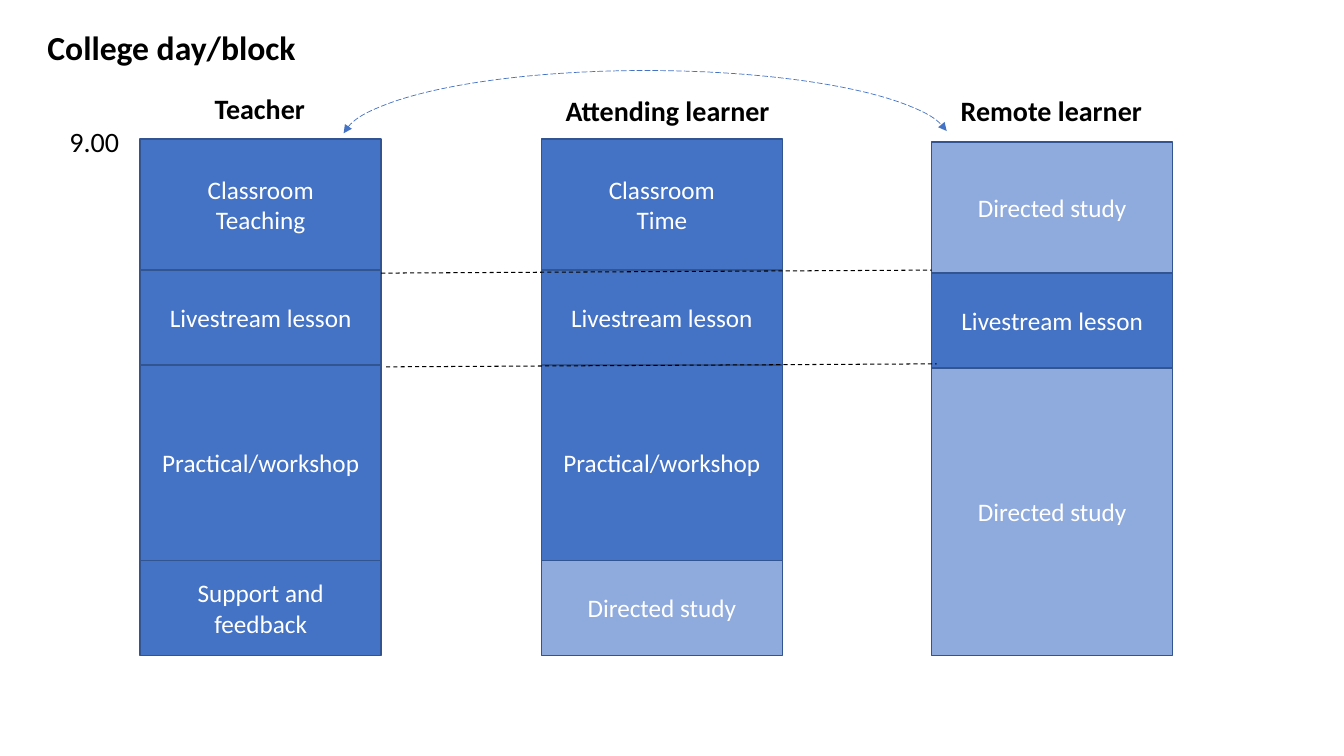
import lxml.etree
import pptx
import pptx.dml.color
import pptx.enum.dml
import pptx.enum.shapes
import pptx.enum.text
import pptx.oxml.ns
import pptx.util

ALIGN = pptx.enum.text.PP_ALIGN
ANCHOR = pptx.enum.text.MSO_ANCHOR
DASH = pptx.enum.dml.MSO_LINE
SHAPE = pptx.enum.shapes.MSO_SHAPE
BLUE, PALE, EDGE, BLACK, WHITE = "4472C4", "8FAADC", "325491", "000000", "FFFFFF"


def rgb(value):
    return pptx.dml.color.RGBColor.from_string(value)


class Deck:
    """Draws styled elements on the current slide, placed in percent of its size."""

    font = "Calibri"

    def __init__(self, width, height):
        self.prs = pptx.Presentation()
        self.prs.slide_width = pptx.util.Inches(width)
        self.prs.slide_height = pptx.util.Inches(height)
        self.s = self.prs.slides.add_slide(self.prs.slide_layouts[5])

    def at(self, *shares):
        sizes = (self.prs.slide_width, self.prs.slide_height) * 2
        return [round(share * size / 100) for share, size in zip(shares, sizes)]

    def put_text(self, sp, text, size, color=BLACK, bold=False, align=ALIGN.LEFT,
                 anchor=ANCHOR.TOP, wrap=False):
        tf = sp.text_frame
        tf.word_wrap = wrap
        tf.auto_size = pptx.enum.text.MSO_AUTO_SIZE.NONE
        tf.vertical_anchor = anchor
        for i, line in enumerate(text.split("\n")):
            p = tf.add_paragraph() if i else tf.paragraphs[0]
            p.alignment = align
            r = p.add_run()
            r.text = line
            r.font.name = self.font
            r.font.size = pptx.util.Pt(size)
            r.font.bold = bold
            r.font.color.rgb = rgb(color)

    def stroke(self, sp, color, width, dash=None):
        sp.line.color.rgb = rgb(color)
        sp.line.width = pptx.util.Pt(width)
        if dash:
            sp.line.dash_style = dash

    def title(self, text, *box):
        sp = self.s.shapes.title
        sp.left, sp.top, sp.width, sp.height = self.at(*box)
        self.put_text(sp, text, 24, bold=True)

    def label(self, text, *box, bold=False):
        sp = self.s.shapes.add_textbox(*self.at(*box))
        self.put_text(sp, text, 20, bold=bold)

    def block(self, text, fill, *box):
        sp = self.s.shapes.add_shape(SHAPE.RECTANGLE, *self.at(*box))
        sp.shadow.inherit = False
        sp.fill.solid()
        sp.fill.fore_color.rgb = rgb(fill)
        self.stroke(sp, EDGE, 1)
        self.put_text(sp, text, 18, WHITE, align=ALIGN.CENTER, anchor=ANCHOR.MIDDLE, wrap=True)

    def column(self, left, width, edges, blocks):
        for top, bottom, (text, fill) in zip(edges, edges[1:], blocks):
            self.block(text, fill, left, top, width, bottom - top)

    def guide(self, *ends):
        kind = pptx.enum.shapes.MSO_CONNECTOR.STRAIGHT
        sp = self.s.shapes.add_connector(kind, *self.at(*ends))
        self.stroke(sp, BLACK, 0.75, DASH.DASH)
        lxml.etree.SubElement(sp._element.spPr, pptx.oxml.ns.qn("a:effectLst"))

    def arc(self, start, end, *box):
        sp = self.s.shapes.add_shape(SHAPE.ARC, *self.at(*box))
        sp.shadow.inherit = False
        sp.adjustments[0], sp.adjustments[1] = start, end
        sp.fill.background()
        self.stroke(sp, BLUE, 0.5, DASH.LONG_DASH)
        ln = sp._element.spPr.find(pptx.oxml.ns.qn("a:ln"))
        for tag in ("a:headEnd", "a:tailEnd"):
            lxml.etree.SubElement(ln, pptx.oxml.ns.qn(tag), type="triangle")


def main():
    deck = Deck(13.33, 7.5)
    deck.title("College day/block", 2.78, 2.93, 20.18, 6.67)

    live = ("Livestream lesson", BLUE)
    practical = ("Practical/workshop", BLUE)
    study = ("Directed study", PALE)
    college_edges = [18.4, 35.73, 48.27, 74.13, 86.67]
    remote_edges = [18.8, 36.13, 48.67, 86.67]
    columns = [
        (10.43, college_edges, [("Classroom\nTeaching", BLUE), live, practical,
                                ("Support and feedback", BLUE)]),
        (40.28, college_edges, [("Classroom\nTime", BLUE), live, practical, study]),
        (69.32, remote_edges, [study, live, study]),
    ]
    for left, edges, blocks in columns:
        deck.column(left, 17.93, edges, blocks)

    headings = [("Teacher", 15.23, 11.47, 8.33),
                ("Attending learner", 41.34, 11.73, 16.88),
                ("Remote learner", 70.74, 11.73, 15.15)]
    for text, left, top, width in headings:
        deck.label(text, left, top, width, 5.87, bold=True)
    deck.label("9.00", 4.43, 15.87, 5.25, 5.87)

    for left, top in [(28.36, 36.13), (28.73, 48.53)]:
        deck.guide(left, top, left + 40.96, top - 0.4)
    deck.arc(108.89, 214.85, 25.43, 9.33, 45.24, 18.67)
    deck.prs.save("out.pptx")


if __name__ == "__main__":
    main()
